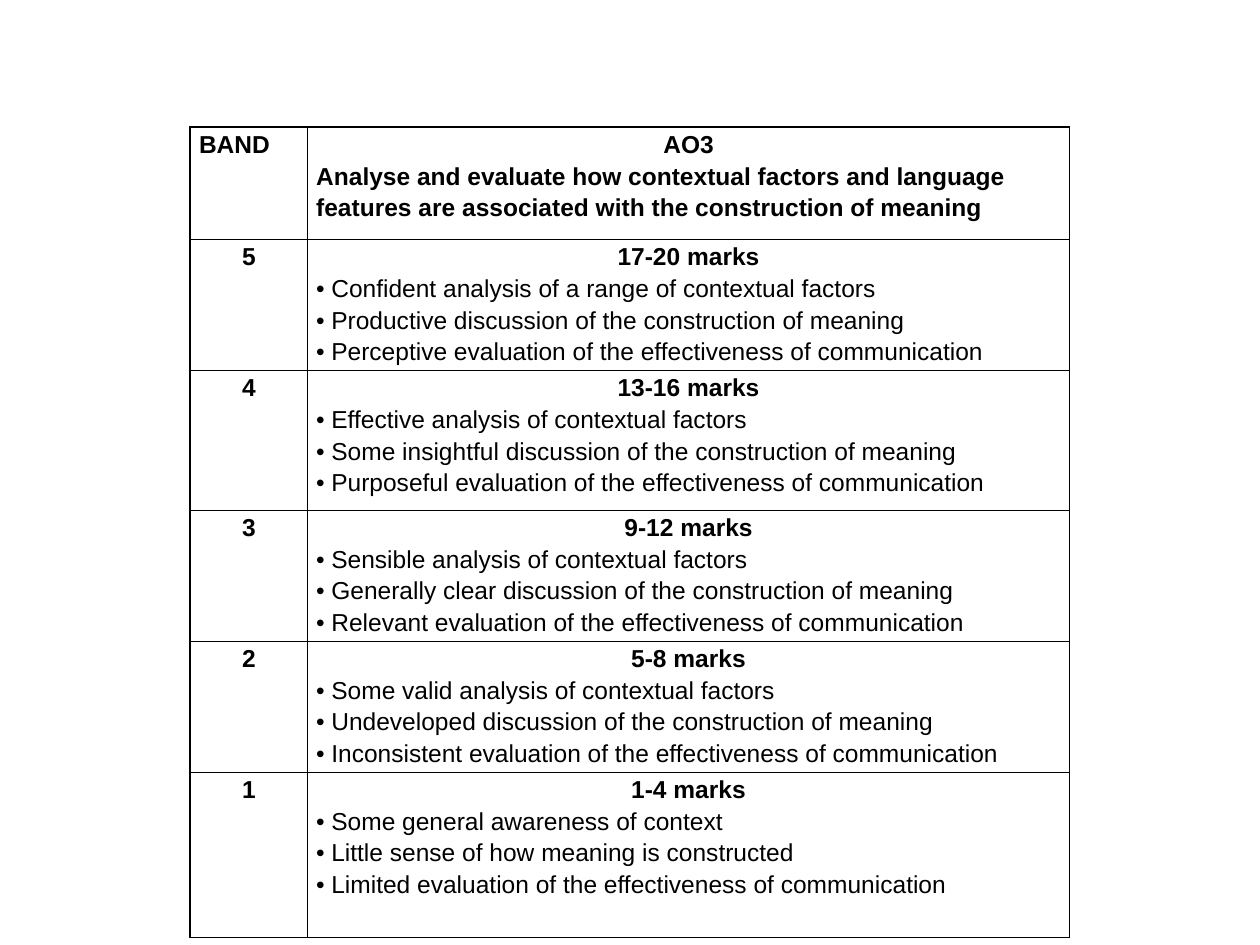
from pptx import Presentation
from pptx.dml.color import RGBColor
from pptx.enum.text import PP_ALIGN as Align
from pptx.oxml import parse_xml
from pptx.oxml.ns import nsdecls
from pptx.util import Inches, Pt

COLORS = {"ink": "000000"}
WIDTHS = [0.93, 6.05]
HEIGHTS = [0.89, 1.04, 1.11, 1.04, 1.04, 1.31]
AIM = ("Analyse and evaluate how contextual factors and language "
       "features are associated with the construction of meaning")
BANDS = [
    ("5", "17-20 marks", "Confident analysis of a range of contextual factors",
     "Productive discussion of the construction of meaning", "Perceptive"),
    ("4", "13-16 marks", "Effective analysis of contextual factors",
     "Some insightful discussion of the construction of meaning", "Purposeful"),
    ("3", "9-12 marks", "Sensible analysis of contextual factors",
     "Generally clear discussion of the construction of meaning", "Relevant"),
    ("2", "5-8 marks", "Some valid analysis of contextual factors",
     "Undeveloped discussion of the construction of meaning", "Inconsistent"),
    ("1", "1-4 marks", "Some general awareness of context",
     "Little sense of how meaning is constructed", "Limited"),
]


def write(cell, lines):
    """Fill a cell with (text, style) lines; style is left, center or bullet."""
    frame = cell.text_frame
    for i, (text, style) in enumerate(lines):
        para = frame.paragraphs[0] if i == 0 else frame.add_paragraph()
        para.text = text
        para.line_spacing = 1.15
        para.alignment = Align.CENTER if style == "center" else Align.LEFT
        if style == "bullet":
            props = para._p.get_or_add_pPr()
            props.set("marL", str(Inches(0.12)))
            props.set("indent", str(-Inches(0.12)))
            props.append(parse_xml(f'<a:buFont {nsdecls("a")} typeface="Arial"/>'))
            props.append(parse_xml(f'<a:buChar {nsdecls("a")} char="•"/>'))
        font = para.runs[0].font
        font.name, font.size = "Arial", Pt(14)
        font.bold = style != "bullet"
        font.color.rgb = RGBColor.from_string(COLORS["ink"])


def border(cell, row, col):
    """Draw a heavier line on the table's outer edge than inside it."""
    outer = {"L": col == 0, "R": col == len(WIDTHS) - 1,
             "T": row == 0, "B": row == len(HEIGHTS) - 1}
    props = cell._tc.get_or_add_tcPr()
    for i, (side, edge) in enumerate(outer.items()):
        props.insert(i, parse_xml(
            f'<a:ln{side} {nsdecls("a")} w="{Pt(1 if edge else 0.5)}"><a:solidFill>'
            f'<a:srgbClr val="{COLORS["ink"]}"/></a:solidFill></a:ln{side}>'))


prs = Presentation()
prs.slide_width, prs.slide_height = Inches(10), Inches(7.5)
slide = prs.slides.add_slide(prs.slide_layouts[6])

table = slide.shapes.add_table(
    len(HEIGHTS), len(WIDTHS), Inches(1.51), Inches(1.01),
    Inches(sum(WIDTHS)), Inches(sum(HEIGHTS))).table
table.first_row = table.horz_banding = False
for column, width in zip(table.columns, WIDTHS):
    column.width = Inches(width)
for row, height in zip(table.rows, HEIGHTS):
    row.height = Inches(height)

for r in range(len(HEIGHTS)):
    for c in range(len(WIDTHS)):
        cell = table.cell(r, c)
        cell.margin_left = cell.margin_right = Inches(0.07)
        cell.margin_top = cell.margin_bottom = 0
        cell.fill.background()
        border(cell, r, c)

write(table.cell(0, 0), [("BAND", "left")])
write(table.cell(0, 1), [("AO3", "center"), (AIM, "left")])
for r, (band, marks, factors, meaning, grade) in enumerate(BANDS, 1):
    write(table.cell(r, 0), [(band, "center")])
    write(table.cell(r, 1), [
        (marks, "center"), (factors, "bullet"), (meaning, "bullet"),
        (f"{grade} evaluation of the effectiveness of communication", "bullet")])

prs.save("out.pptx")
